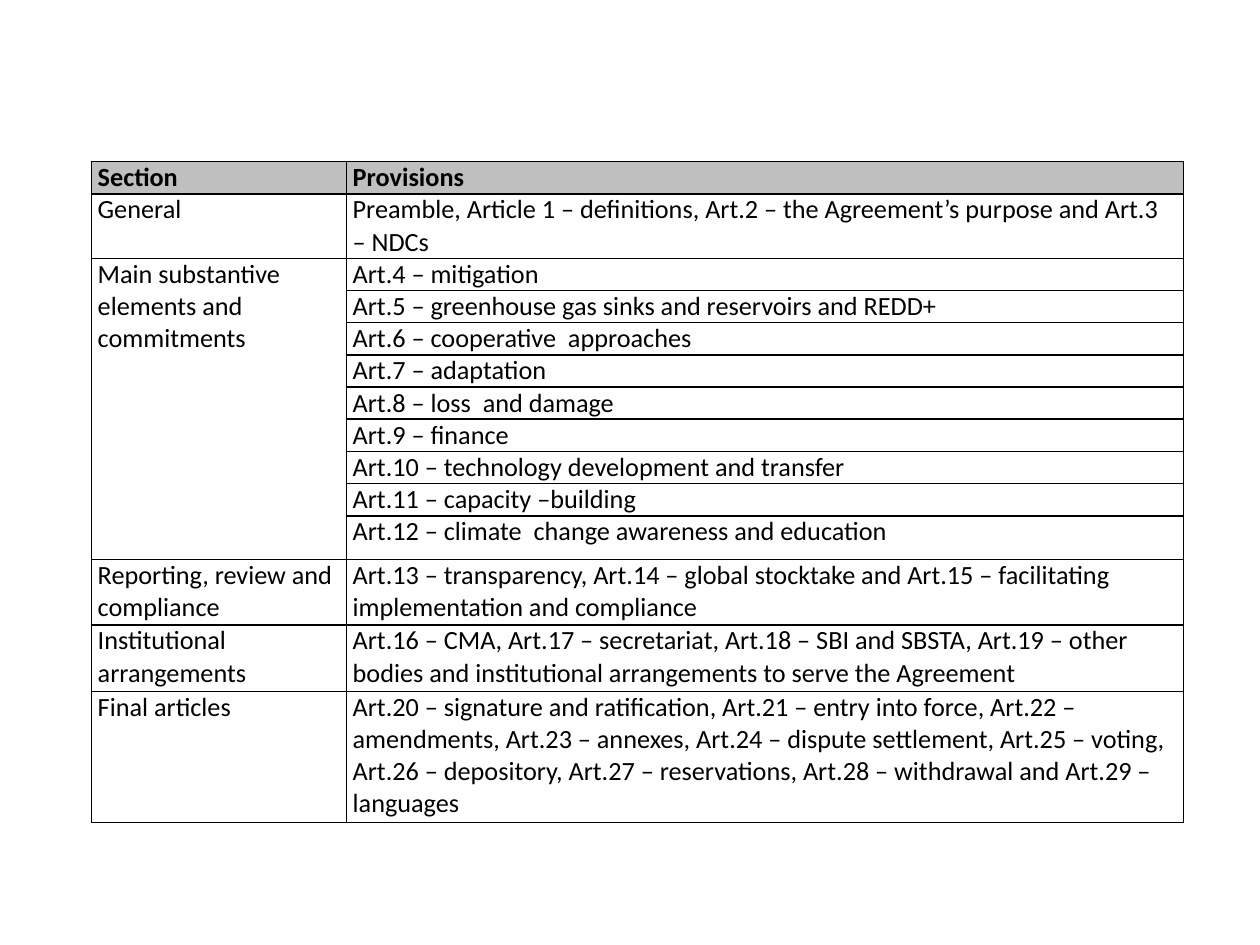
from dataclasses import dataclass

from lxml.etree import SubElement
from pptx import Presentation
from pptx.dml.color import RGBColor
from pptx.oxml.ns import qn
from pptx.table import Table, _Cell
from pptx.util import Cm, Pt

BLACK = "000000"
HEADER_GREY = "BFBFBF"
LINE_HEIGHT = 0.64
COLUMN_WIDTHS = (5.14, 16.88)
FONT = {"name": "Calibri", "size": Pt(15)}
CELL_FORMAT = {
    "margin_left": Cm(0.13),
    "margin_right": Cm(0.13),
    "margin_top": 0,
    "margin_bottom": 0,
}


@dataclass(frozen=True)
class Provision:
    text: str
    height: float = LINE_HEIGHT


@dataclass(frozen=True)
class Section:
    name: str
    provisions: tuple[Provision, ...]
    header: bool = False


SECTIONS = (
    Section("Section", (Provision("Provisions"),), header=True),
    Section("General", (
        Provision("Preamble, Article 1 – definitions, Art.2 – the Agreement’s purpose "
                  "and Art.3 – NDCs", 2 * LINE_HEIGHT),
    )),
    Section("Main substantive elements and commitments", (
        Provision("Art.4 – mitigation"),
        Provision("Art.5 – greenhouse gas sinks and reservoirs and REDD+"),
        Provision("Art.6 – cooperative  approaches"),
        Provision("Art.7 – adaptation"),
        Provision("Art.8 – loss  and damage"),
        Provision("Art.9 – finance"),
        Provision("Art.10 – technology development and transfer"),
        Provision("Art.11 – capacity –building"),
        Provision("Art.12 – climate  change awareness and education", 0.88),
    )),
    Section("Reporting, review and compliance", (
        Provision("Art.13 – transparency, Art.14 – global stocktake and Art.15 – "
                  "facilitating implementation and compliance", 1.32),
    )),
    Section("Institutional arrangements", (
        Provision("Art.16 – CMA, Art.17 – secretariat, Art.18 – SBI and SBSTA, Art.19 – "
                  "other bodies and institutional arrangements to serve the Agreement", 1.34),
    )),
    Section("Final articles", (
        Provision("Art.20 – signature and ratification, Art.21 – entry into force, "
                  "Art.22 – amendments, Art.23 – annexes, Art.24 – dispute settlement, "
                  "Art.25 – voting, Art.26 – depository, Art.27 – reservations, "
                  "Art.28 – withdrawal and Art.29 – languages", 2.64),
    )),
)


def color(value: str) -> RGBColor:
    """Turn a hex string into a colour."""
    return RGBColor.from_string(value)


def apply_format(target: object, values: dict) -> None:
    """Set every attribute named in the format values."""
    for name, value in values.items():
        setattr(target, name, value)


def add_borders(cell: _Cell) -> None:
    """Draw a thin black line on all four sides of a cell."""
    properties = cell._tc.get_or_add_tcPr()
    for side in ("a:lnL", "a:lnR", "a:lnT", "a:lnB"):
        line = SubElement(properties, qn(side), w=str(Pt(1)))
        fill = SubElement(line, qn("a:solidFill"))
        SubElement(fill, qn("a:srgbClr"), val=BLACK)


def format_cell(cell: _Cell, header: bool) -> None:
    """Give a cell its margins, borders and fill."""
    apply_format(cell, CELL_FORMAT)
    add_borders(cell)
    if header:
        cell.fill.solid()
        cell.fill.fore_color.rgb = color(HEADER_GREY)
    else:
        cell.fill.background()


def write_text(cell: _Cell, text: str, header: bool) -> None:
    """Write one formatted run into a cell."""
    run = cell.text_frame.paragraphs[0].add_run()
    run.text = text
    apply_format(run.font, {**FONT, "bold": header})
    run.font.color.rgb = color(BLACK)


def fill_section(table: Table, first_row: int, section: Section) -> int:
    """Fill the rows of one section and return the next free row."""
    for row, provision in enumerate(section.provisions, first_row):
        table.rows[row].height = Cm(provision.height)
        for cell in table.rows[row].cells:
            format_cell(cell, section.header)
        write_text(table.cell(row, 1), provision.text, section.header)
    name_cell = table.cell(first_row, 0)
    write_text(name_cell, section.name, section.header)
    next_row = first_row + len(section.provisions)
    if len(section.provisions) > 1:
        name_cell.merge(table.cell(next_row - 1, 0))
    return next_row


def main() -> None:
    """Build the slide with the table of provisions."""
    presentation = Presentation()
    apply_format(presentation, {"slide_width": Cm(25.4), "slide_height": Cm(19.05)})
    slide = presentation.slides.add_slide(presentation.slide_layouts[6])
    provisions = [provision for section in SECTIONS for provision in section.provisions]
    height = sum(provision.height for provision in provisions)
    table = slide.shapes.add_table(
        len(provisions), len(COLUMN_WIDTHS),
        Cm(1.84), Cm(3.26), Cm(sum(COLUMN_WIDTHS)), Cm(height),
    ).table
    apply_format(table, {"first_row": False, "horz_banding": False})
    for column, width in zip(table.columns, COLUMN_WIDTHS):
        column.width = Cm(width)
    row = 0
    for section in SECTIONS:
        row = fill_section(table, row, section)
    presentation.save("out.pptx")


if __name__ == "__main__":
    main()
